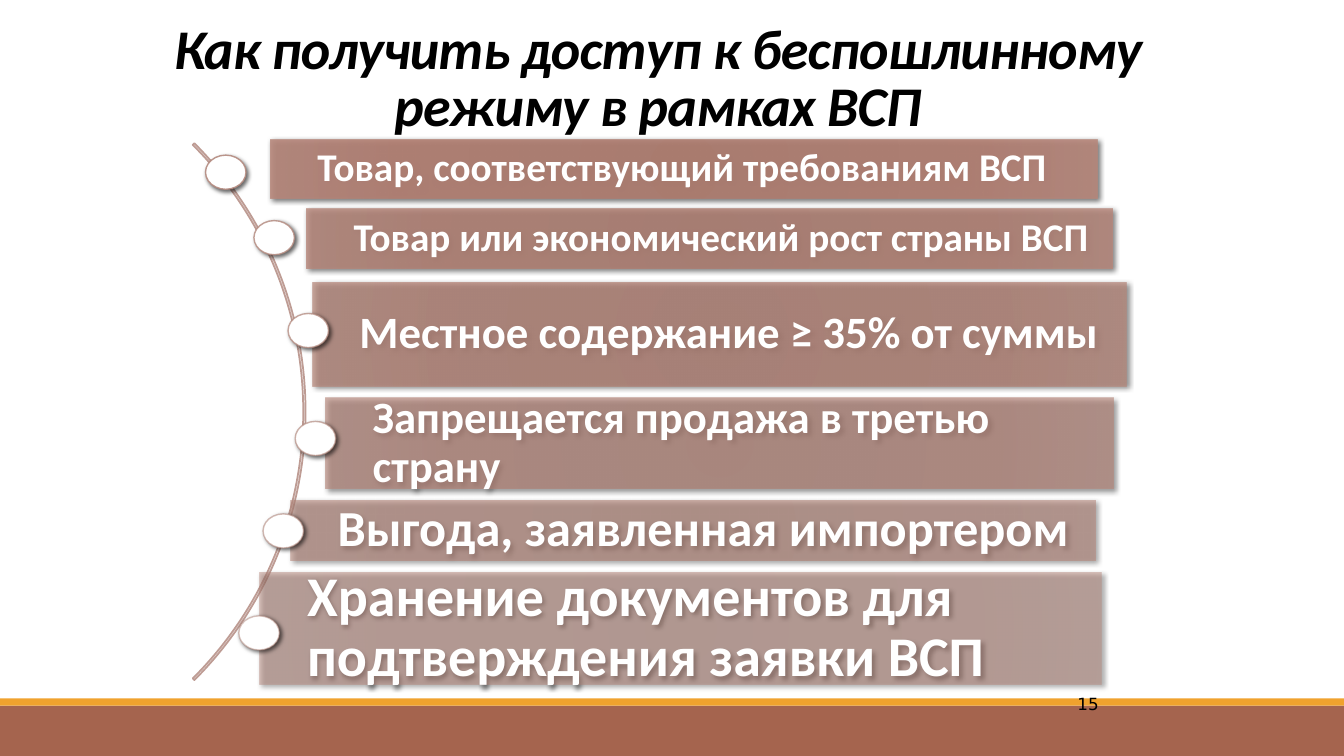
from dataclasses import dataclass

from pptx import Presentation
from pptx.dml.color import RGBColor
from pptx.enum.shapes import MSO_SHAPE
from pptx.enum.text import MSO_ANCHOR, PP_ALIGN
from pptx.oxml import parse_xml
from pptx.oxml.ns import nsdecls
from pptx.util import Cm, Pt


@dataclass(frozen=True)
class Theme:
    font: str = "Calibri"
    number_font: str = "DejaVu Sans"
    black: str = "000000"
    white: str = "FFFFFF"
    band: str = "A5644E"
    stripe: str = "F0A22E"
    arc: str = "BE9C94"
    ring: str = "B58B80"
    gradient: tuple = ((0, "B07D70"), (34, "B17F72"), (70, "B48073"), (100, "B8897D"))
    title_size: int = 40
    number_size: int = 12


THEME = Theme()
WIDTH, HEIGHT = 33.87, 19.05
MARKER_SIZE = (1.02, 0.86)

STEPS = [
    ("Товар, соответствующий требованиям ВСП", 28, (6.81, 3.51, 20.85, 1.5), (5.18, 3.91)),
    ("Товар или экономический рост страны ВСП", 28, (7.72, 5.26, 20.32, 1.5), (6.4, 5.56)),
    ("Местное содержание ≥ 35% от суммы", 32, (7.87, 7.11, 20.52, 2.62), (7.26, 7.9)),
    ("Запрещается продажа в третью страну", 32, (8.2, 10.03, 19.86, 2.29), (7.44, 10.62)),
    ("Выгода, заявленная импортером", 36, (7.32, 12.62, 20.29, 1.5), (6.63, 12.95)),
    ("Хранение документов для подтверждения заявки ВСП", 40, (6.55, 14.43, 21.21, 2.82), (6.02, 15.52)),
]


def lengths(values):
    return [Cm(v) for v in values]


def format_paragraph(p, size, color, font=THEME.font, bold=False, italic=False):
    p.font.name = font
    p.font.size = Pt(size)
    p.font.bold = bold
    p.font.italic = italic
    p.font.color.rgb = RGBColor.from_string(color)


def add_plain_shape(s, kind, box, fill=None):
    sp = s.shapes.add_shape(kind, *lengths(box))
    sp.shadow.inherit = False
    sp.line.fill.background()
    if fill:
        sp.fill.solid()
        sp.fill.fore_color.rgb = RGBColor.from_string(fill)
    else:
        sp.fill.background()
    return sp


def set_line(sp, color, width):
    sp.line.color.rgb = RGBColor.from_string(color)
    sp.line.width = Pt(width)


def add_shadow(sp, blur):
    effects = sp._element.spPr.find("{*}effectLst")
    effects.append(parse_xml(
        f'<a:outerShdw {nsdecls("a")} blurRad="{Pt(blur)}" dist="{Pt(2)}" dir="2700000" '
        f'algn="br" rotWithShape="0"><a:srgbClr val="{THEME.black}">'
        '<a:alpha val="60000"/></a:srgbClr></a:outerShdw>'))


def set_gradient(sp, opacity):
    stops = "".join(
        f'<a:gs pos="{pos * 1000}"><a:srgbClr val="{color}">'
        f'<a:alpha val="{opacity * 1000}"/></a:srgbClr></a:gs>'
        for pos, color in THEME.gradient)
    spPr = sp._element.spPr
    spPr.replace(spPr.find("{*}noFill"), parse_xml(
        f'<a:gradFill {nsdecls("a")} rotWithShape="1"><a:gsLst>{stops}</a:gsLst>'
        '<a:path path="circle"><a:fillToRect l="100000" t="100000" r="100000" b="100000"/>'
        '</a:path></a:gradFill>'))


def add_title(s, text):
    title = s.shapes.title
    title.left, title.top, title.width, title.height = lengths((3.51, 0.43, 26.14, 3.18))
    tf = title.text_frame
    tf.text = text
    tf.vertical_anchor = MSO_ANCHOR.BOTTOM
    p = tf.paragraphs[0]
    p.alignment = PP_ALIGN.CENTER
    p.line_spacing = 0.85
    format_paragraph(p, THEME.title_size, THEME.black, bold=True, italic=True)
    p.font._element.set("spc", "-50")


def add_page_number(s, number):
    tf = s.shapes.add_textbox(*lengths((22.43, 17.35, 5.51, 1.32))).text_frame
    tf.word_wrap = True
    p = tf.paragraphs[0]
    p.text = number
    p.alignment = PP_ALIGN.RIGHT
    format_paragraph(p, THEME.number_size, THEME.black, THEME.number_font)


def add_arc(s):
    sp = add_plain_shape(s, MSO_SHAPE.BLOCK_ARC, (-11.43, 0.81, 19.13, 19.13))
    for i, value in enumerate((189, 27, 0.003)):
        sp.adjustments[i] = value
    set_line(sp, THEME.arc, 1.25)


def add_step(s, text, size, box, opacity):
    sp = add_plain_shape(s, MSO_SHAPE.RECTANGLE, box)
    set_gradient(sp, opacity)
    add_shadow(sp, 3.5)
    tf = sp.text_frame
    tf.word_wrap = True
    tf.vertical_anchor = MSO_ANCHOR.MIDDLE
    tf.margin_left = Cm(1.19)
    tf.margin_top = tf.margin_right = tf.margin_bottom = Cm(size / 140)
    p = tf.paragraphs[0]
    p.text = text
    p.alignment = PP_ALIGN.LEFT
    p.line_spacing = 0.9
    format_paragraph(p, size, THEME.white, bold=True)


def add_marker(s, position, opacity):
    sp = add_plain_shape(s, MSO_SHAPE.OVAL, position + MARKER_SIZE, THEME.white)
    set_line(sp, THEME.ring, 1)
    color = sp._element.spPr.find("{*}ln/{*}solidFill/{*}srgbClr")
    color.append(parse_xml(f'<a:alpha {nsdecls("a")} val="{opacity * 1000}"/>'))
    add_shadow(sp, 3)


def main():
    prs = Presentation()
    prs.slide_width, prs.slide_height = lengths((WIDTH, HEIGHT))
    s = prs.slides.add_slide(prs.slide_layouts[5])
    add_plain_shape(s, MSO_SHAPE.RECTANGLE, (0, 17.78, WIDTH, 1.27), THEME.band)
    add_plain_shape(s, MSO_SHAPE.RECTANGLE, (0, 17.6, WIDTH, 0.18), THEME.stripe)
    add_page_number(s, "15")
    add_title(s, "Как получить доступ к беспошлинному режиму в рамках ВСП")
    add_arc(s)
    for i, (text, size, box, marker) in enumerate(STEPS):
        opacity = 90 - 8 * i
        add_step(s, text, size, box, opacity)
        add_marker(s, marker, opacity)
    prs.save("out.pptx")


if __name__ == "__main__":
    main()
